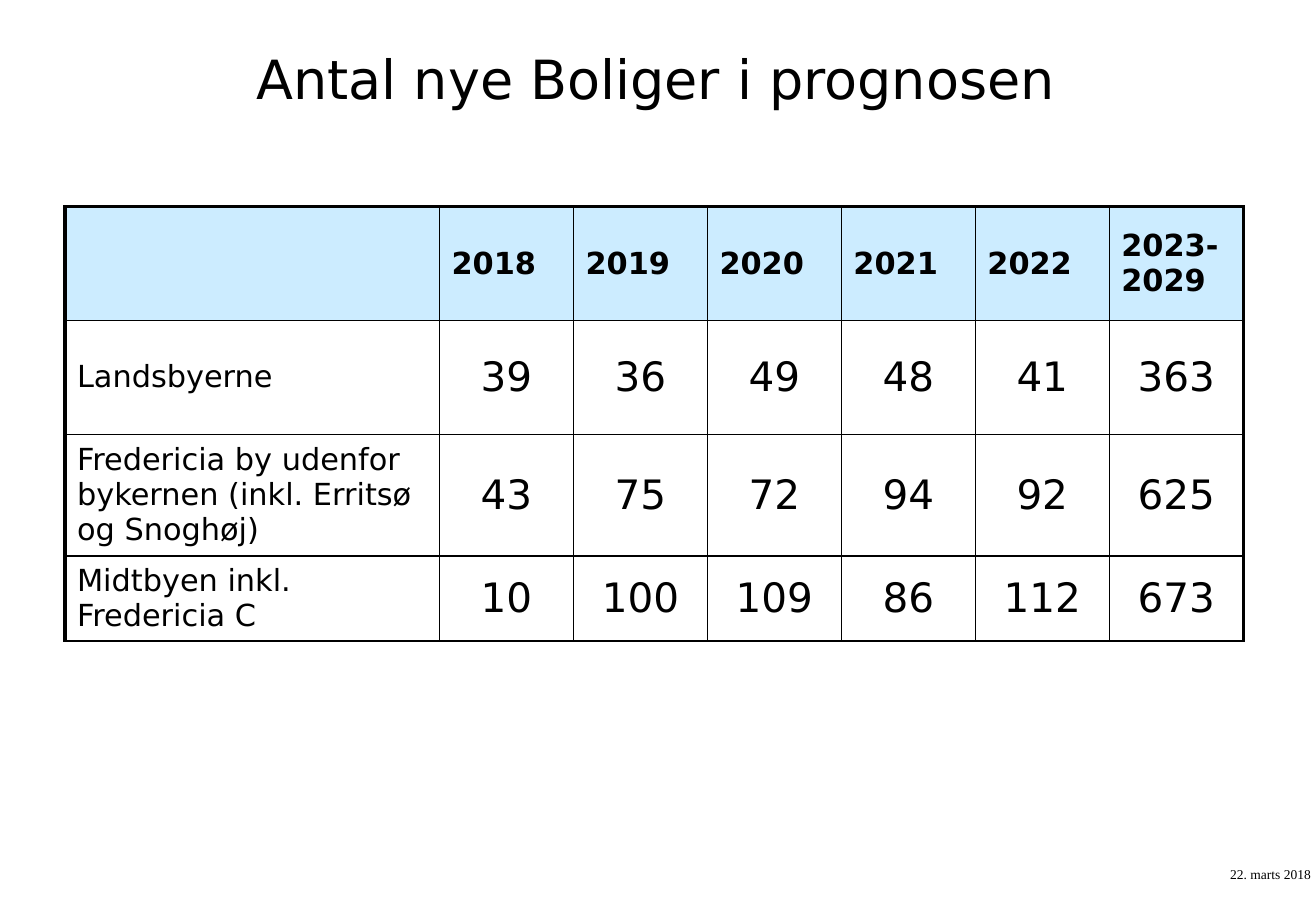
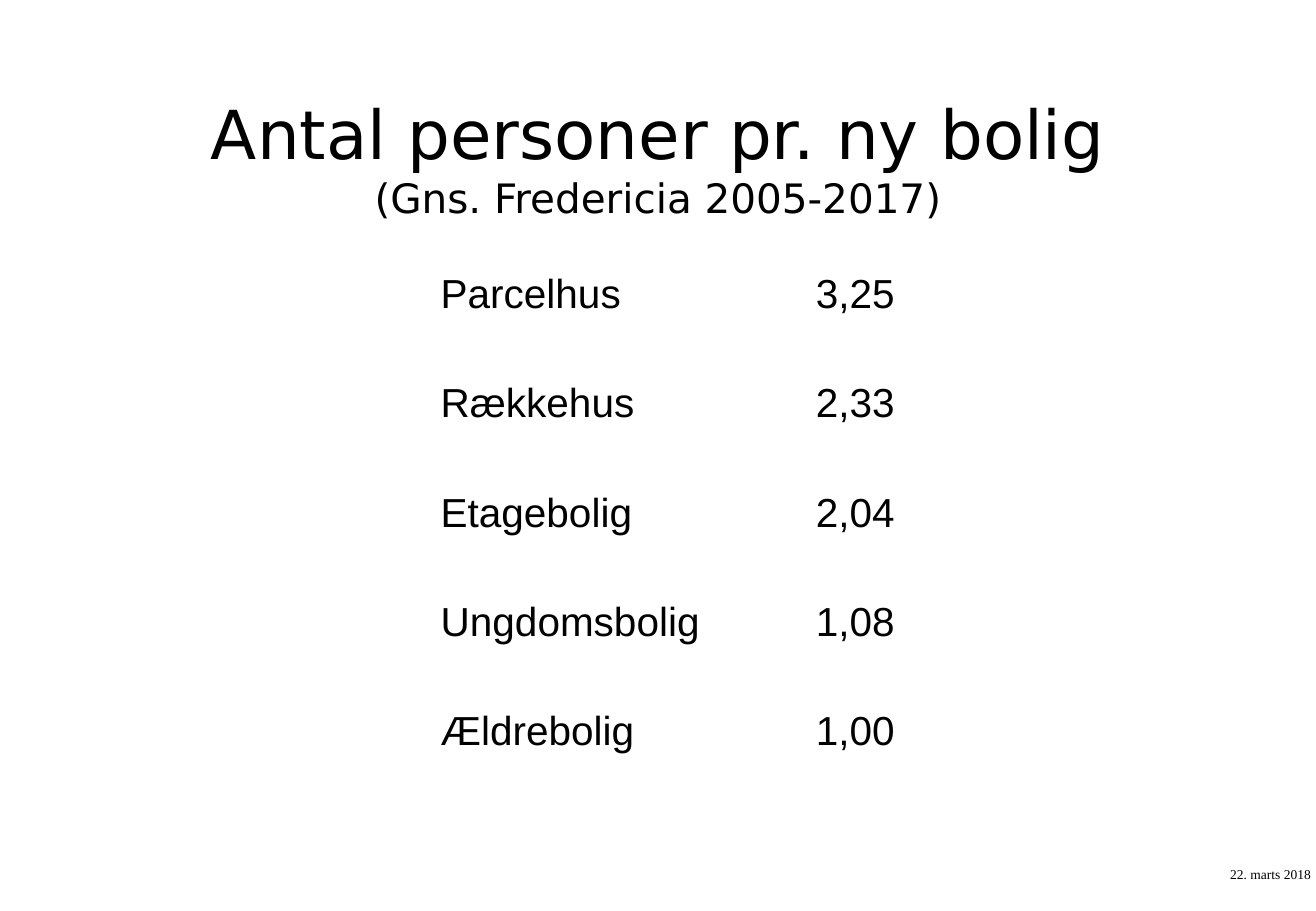
from pptx import Presentation
from pptx.dml.color import RGBColor as RGB
from pptx.enum.text import MSO_ANCHOR as ANCHOR, MSO_AUTO_SIZE as FIT, PP_ALIGN as ALIGN
from pptx.oxml.ns import qn
from pptx.util import Pt
from lxml.etree import SubElement

COLORS = {"text": "000000", "border": "000000", "header": "CCECFF"}
SANS, ARIAL, SERIF = "DejaVu Sans", "Arial", "Times New Roman"


class Deck:
    def __init__(self, width, height):
        self.prs = Presentation()
        self.prs.slide_width, self.prs.slide_height = Pt(width), Pt(height)
        self.s = None

    def run(self, p, text, **fmt):
        r = p.add_run()
        r.text = text
        for name, value in fmt.items():
            setattr(r.font, name, value)
        r.font.color.rgb = RGB.from_string(COLORS["text"])

    def slide(self, box, lines):
        self.s = self.prs.slides.add_slide(self.prs.slide_layouts[5])
        self.title(box, lines)
        self.date()

    def title(self, box, lines):
        sp = self.s.shapes.title
        sp.left, sp.top, sp.width, sp.height = map(Pt, box)
        tf = sp.text_frame
        for name, value in {"auto_size": FIT.NONE, "word_wrap": True,
                            "vertical_anchor": ANCHOR.MIDDLE}.items():
            setattr(tf, name, value)
        p = tf.paragraphs[0]
        p.alignment = ALIGN.CENTER
        for i, (text, size) in enumerate(lines):
            if i:
                p.add_line_break()
            self.run(p, text, name=SANS, size=Pt(size))

    def date(self):
        sp = self.s.shapes.add_textbox(Pt(722), Pt(510), Pt(58), Pt(17))
        tf = sp.text_frame
        tf.word_wrap = True
        tf.margin_right = 0
        self.run(tf.paragraphs[0], "22. marts 2018", name=SERIF, size=Pt(8))

    def table(self, left, top, widths, heights):
        sp = self.s.shapes.add_table(len(heights), len(widths), Pt(left), Pt(top),
                                     Pt(sum(widths)), Pt(sum(heights)))
        tbl = sp.table
        tbl.first_row = tbl.horz_banding = False
        for col, width in zip(tbl.columns, widths):
            col.width = Pt(width)
        for row, height in zip(tbl.rows, heights):
            row.height = Pt(height)
        return tbl

    def borders(self, cell, widths):
        tc_pr = cell._tc.get_or_add_tcPr()
        for side, width in zip("LRTB", widths):
            ln = SubElement(tc_pr, qn(f"a:ln{side}"), w=str(Pt(width)))
            if width:
                fill = SubElement(ln, qn("a:solidFill"))
                SubElement(fill, qn("a:srgbClr"), val=COLORS["border"])
            else:
                SubElement(ln, qn("a:noFill"))

    def cell(self, cell, text, align, anchor, borders=(0, 0, 0, 0), fill=None, **fmt):
        self.borders(cell, borders)
        cell.vertical_anchor = anchor
        if fill:
            cell.fill.solid()
            cell.fill.fore_color.rgb = RGB.from_string(COLORS[fill])
        else:
            cell.fill.background()
        p = cell.text_frame.paragraphs[0]
        p.alignment = align
        if text:
            self.run(p, text, **fmt)


def housing_slide(deck):
    deck.slide((57.5, 14, 663, 64), [("Antal nye Boliger i prognosen", 32)])
    rows = [
        ["", "2018", "2019", "2020", "2021", "2022", "2023-2029"],
        ["Landsbyerne", "39", "36", "49", "48", "41", "363"],
        ["Fredericia by udenfor bykernen (inkl. Erritsø og Snoghøj)",
         "43", "75", "72", "94", "92", "625"],
        ["Midtbyen inkl. Fredericia C", "10", "100", "109", "86", "112", "673"],
    ]
    thin, thick = 1, 2.25
    tbl = deck.table(38.5, 122.5, [222] + [79.4] * 6, [67.5] * 3 + [49.5])
    for i, row in enumerate(rows):
        for j, text in enumerate(row):
            head, number = i == 0, i > 0 and j > 0
            borders = (thick if j == 0 else thin,
                       thick if j == len(row) - 1 else thin,
                       thick if head else thin, thin)
            deck.cell(tbl.cell(i, j), text, ALIGN.CENTER if number else ALIGN.LEFT,
                      ANCHOR.MIDDLE, borders, "header" if head else None,
                      name=SANS, size=Pt(24 if number else 18), bold=head)


def persons_slide(deck):
    deck.slide((58.5, 48, 663, 90), [("Antal personer pr. ny bolig", 40),
                                     ("(Gns. Fredericia 2005-2017)", 24)])
    rows = [("Parcelhus", "3,25"), ("Rækkehus", "2,33"), ("Etagebolig", "2,04"),
            ("Ungdomsbolig", "1,08"), ("Ældrebolig", "1,00")]
    tbl = deck.table(254, 122.5, [175.5, 108], [69] + [64.8] * 4)
    for i, row in enumerate(rows):
        for j, (text, align) in enumerate(zip(row, (ALIGN.LEFT, ALIGN.RIGHT))):
            deck.cell(tbl.cell(i, j), text, align, ANCHOR.BOTTOM, name=ARIAL, size=Pt(24))


def main():
    deck = Deck(780, 540)
    housing_slide(deck)
    persons_slide(deck)
    deck.prs.save("out.pptx")


if __name__ == "__main__":
    main()
